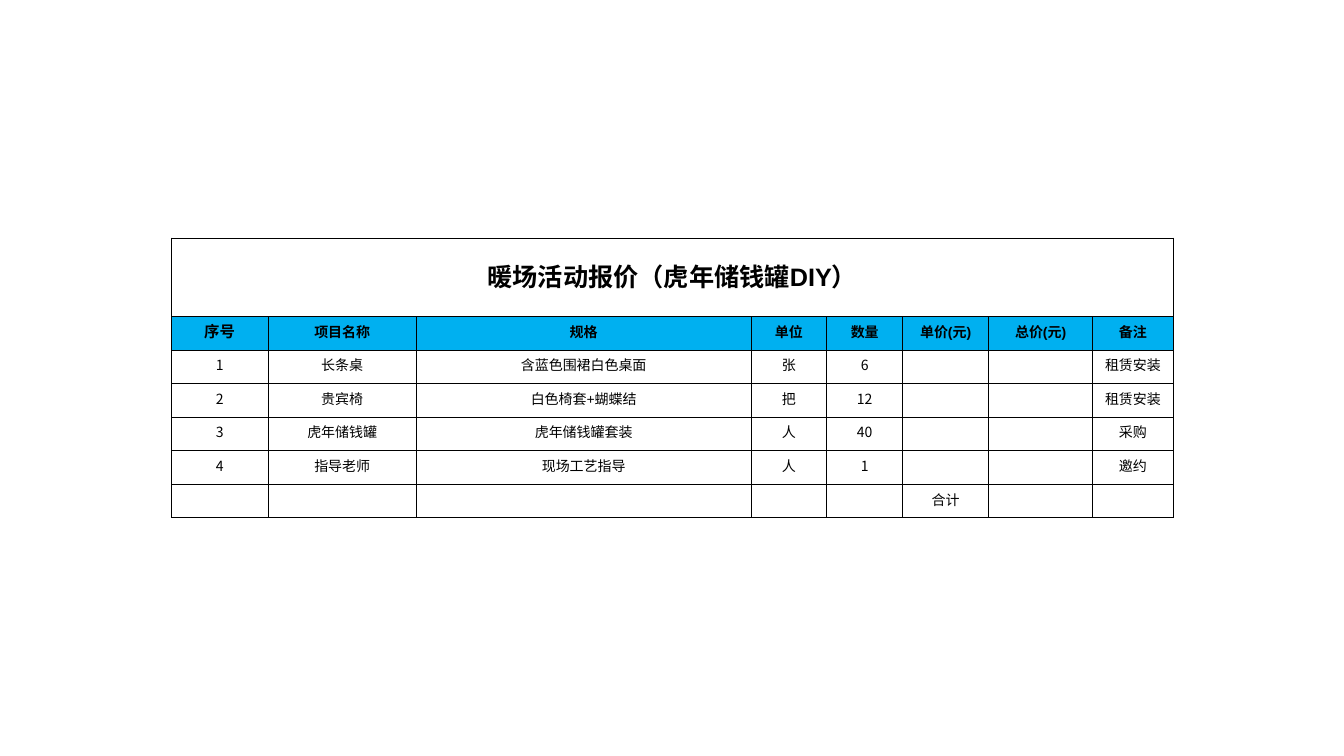
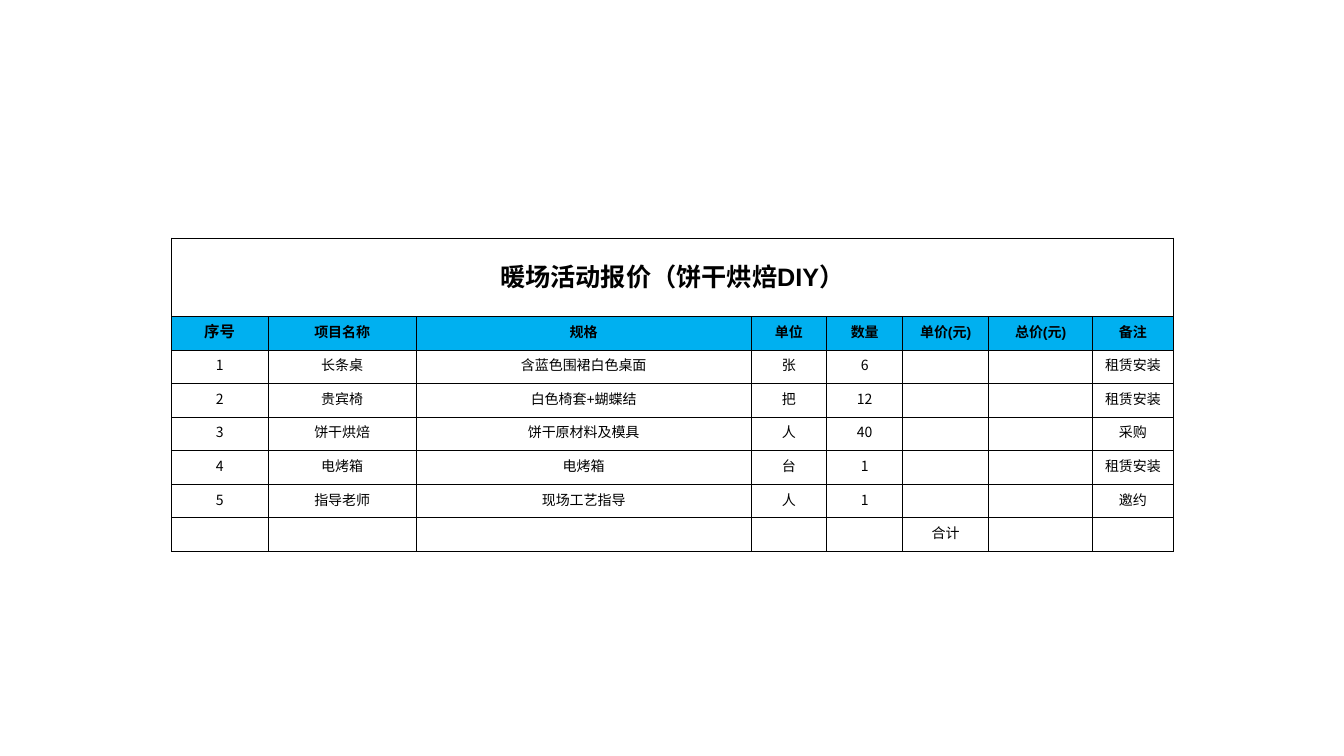
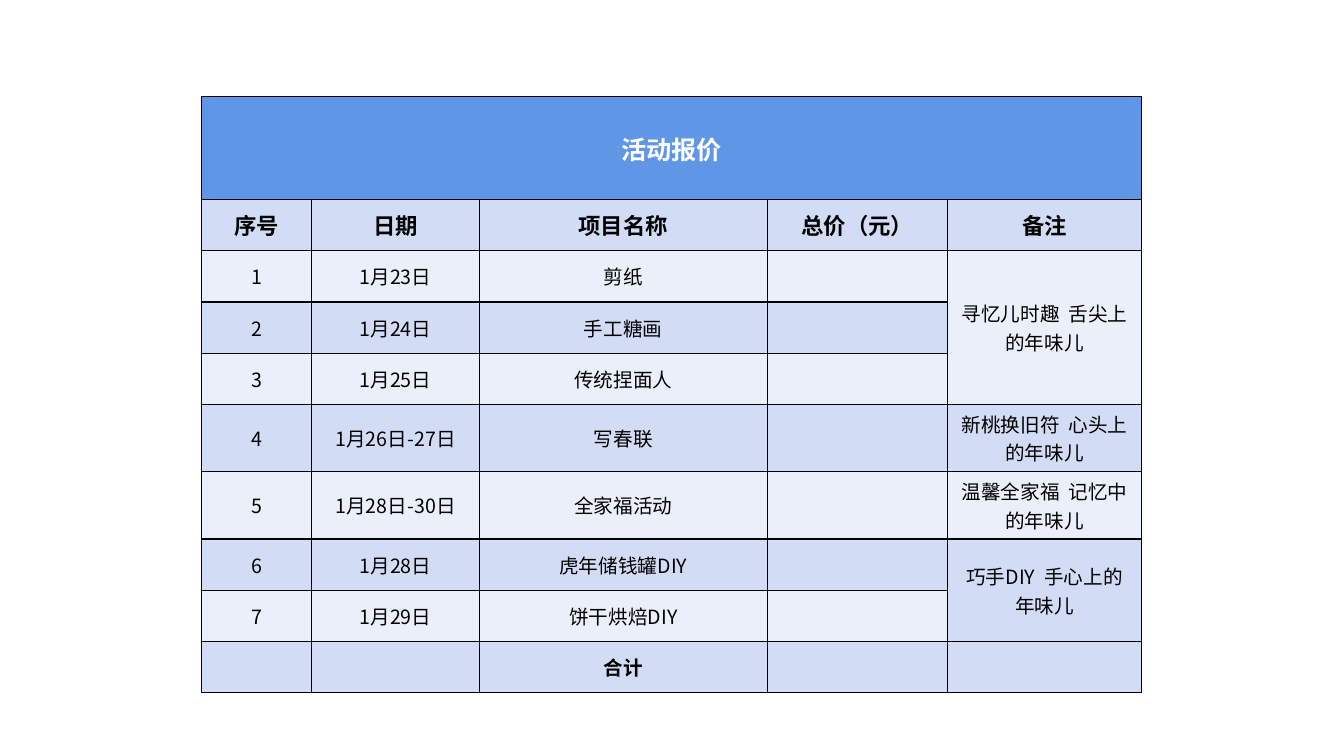
from dataclasses import dataclass

from lxml import etree
from pptx import Presentation
from pptx.dml.color import RGBColor
from pptx.enum import text
from pptx.oxml import ns
from pptx.util import Pt


# Colours, fonts and type sizes
@dataclass(frozen=True)
class Theme:
    cjk: str = "Noto Sans CJK SC"
    latin: str = "Arial"
    black: str = "000000"
    white: str = "FFFFFF"
    cyan: str = "00B0F0"
    blue: str = "6096E6"
    mid: str = "D2DDF5"
    pale: str = "EAEFFA"
    title: float = 18
    head: float = 16
    body: float = 14
    first: float = 11
    small: float = 10


T = Theme()
TIGHT = (0.75, 0.75, 0.75, 3.6)  # left, top, right, bottom
LOOSE = (7.2, 3.6, 7.2, 3.6)

# Content
QUOTE_COLS = (69, 106, 239, 54.2, 54.2, 61.4, 74.3, 57.5)
QUOTE_HEAD = ("序号", "项目名称", "规格", "单位", "数量", "单价(元)", "总价(元)", "备注")
TABLE = ("长条桌", "含蓝色围裙白色桌面", "张", "6", "租赁安装")
CHAIR = ("贵宾椅", "白色椅套+蝴蝶结", "把", "12", "租赁安装")
COACH = ("指导老师", "现场工艺指导", "人", "1", "邀约")
QUOTES = (
    ("暖场活动报价（虎年储钱罐DIY）",
     (TABLE, CHAIR, ("虎年储钱罐", "虎年储钱罐套装", "人", "40", "采购"), COACH)),
    ("暖场活动报价（饼干烘焙DIY）",
     (TABLE, CHAIR, ("饼干烘焙", "饼干原材料及模具", "人", "40", "采购"),
      ("电烤箱", "电烤箱", "台", "1", "租赁安装"), COACH)),
)

PLAN_COLS = (78.5, 120, 205.5, 128.7, 139)
PLAN_HEAD = ("序号", "日期", "项目名称", "总价（元）", "备注")
PLAN = (
    ("1月23日", "剪纸", "寻忆儿时趣  舌尖上的年味儿"),
    ("1月24日", "手工糖画", ""),
    ("1月25日", "传统捏面人", ""),
    ("1月26日-27日", "写春联", "新桃换旧符  心头上的年味儿"),
    ("1月28日-30日", "全家福活动", "温馨全家福  记忆中的年味儿"),
    ("1月28日", "虎年储钱罐DIY", "巧手DIY  手心上的年味儿"),
    ("1月29日", "饼干烘焙DIY", ""),
)
PLAN_SPANS = ((2, 4), (7, 8))  # first and last row of each merged note


# Table parts
def edge(cell, width):
    """Draw all four borders of a cell."""
    props = cell._tc.get_or_add_tcPr()
    for side in ("lnL", "lnR", "lnT", "lnB"):
        line = etree.SubElement(props, ns.qn("a:" + side), w=str(Pt(width)))
        fill = etree.SubElement(line, ns.qn("a:solidFill"))
        etree.SubElement(fill, ns.qn("a:srgbClr"), val=T.black)


def write(cell, words, size, bold=False, color=T.black, font=T.cjk):
    para = cell.text_frame.paragraphs[0]
    para.alignment = text.PP_ALIGN.CENTER
    if not words:  # keeps an empty row from growing
        etree.SubElement(para._p, ns.qn("a:endParaRPr"), sz=str(int(size * 100)))
        return
    run = para.add_run()
    run.text = words
    run.font.size = Pt(size)
    run.font.bold = bold
    run.font.color.rgb = RGBColor.from_string(color)
    run.font.name = font
    etree.SubElement(run._r.get_or_add_rPr(), ns.qn("a:ea"), typeface=T.cjk)


def grid(deck, left, top, cols, rows, inset, line):
    """Add a slide with a plain bordered table whose first row is merged."""
    slide = deck.slides.add_slide(deck.slide_layouts[6])
    table = slide.shapes.add_table(
        len(rows), len(cols), Pt(left), Pt(top), Pt(sum(cols)), Pt(sum(rows))).table
    table.first_row = table.horz_banding = False
    for col, width in zip(table.columns, cols):
        col.width = Pt(width)
    for row, height in zip(table.rows, rows):
        row.height = Pt(height)
    for cell in table.iter_cells():
        (cell.margin_left, cell.margin_top,
         cell.margin_right, cell.margin_bottom) = map(Pt, inset)
        cell.vertical_anchor = text.MSO_ANCHOR.MIDDLE
        edge(cell, line)
    table.cell(0, 0).merge(table.cell(0, len(cols) - 1))
    return table


def paint(table, row, color):
    for cell in table.rows[row].cells:
        cell.fill.solid()
        cell.fill.fore_color.rgb = RGBColor.from_string(color)


# Slides
def quote(deck, title, items):
    rows = [QUOTE_HEAD]
    for num, (name, spec, unit, count, note) in enumerate(items, 1):
        rows.append((str(num), name, spec, unit, count, "", "", note))
    rows.append(("",) * 5 + ("合计", "", ""))
    table = grid(deck, 122.4, 170, QUOTE_COLS, [56] + [24] * len(rows), TIGHT, 0.5)
    paint(table, 0, T.white)
    write(table.cell(0, 0), title, T.title, True, font=T.latin)
    for r, row in enumerate(rows, 1):
        head = r == 1
        paint(table, r, T.cyan if head else T.white)
        for c, words in enumerate(row):
            size = T.first if head and c == 0 else T.small
            font = T.cjk if words.isdigit() else T.latin
            write(table.cell(r, c), words, size, head, font=font)


def plan(deck):
    rows = [PLAN_HEAD]
    for num, (date, name, note) in enumerate(PLAN, 1):
        rows.append((str(num), date, name, "", note))
    rows.append(("", "", "合计", "", ""))
    table = grid(deck, 144, 69, PLAN_COLS, [73.5] + [36.6] * len(rows), LOOSE, 1)
    paint(table, 0, T.blue)
    write(table.cell(0, 0), "活动报价", T.title, True, T.white)
    for r, row in enumerate(rows, 1):
        paint(table, r, T.mid if r % 2 else T.pale)
        for c, words in enumerate(row):
            write(table.cell(r, c), words, T.head if r == 1 else T.body,
                  r in (1, len(rows)))
    for start, end in PLAN_SPANS:
        table.cell(start, 4).merge(table.cell(end, 4))


def main():
    deck = Presentation()
    deck.slide_width, deck.slide_height = Pt(960), Pt(540)
    for title, items in QUOTES:
        quote(deck, title, items)
    plan(deck)
    deck.save("out.pptx")


if __name__ == "__main__":
    main()
